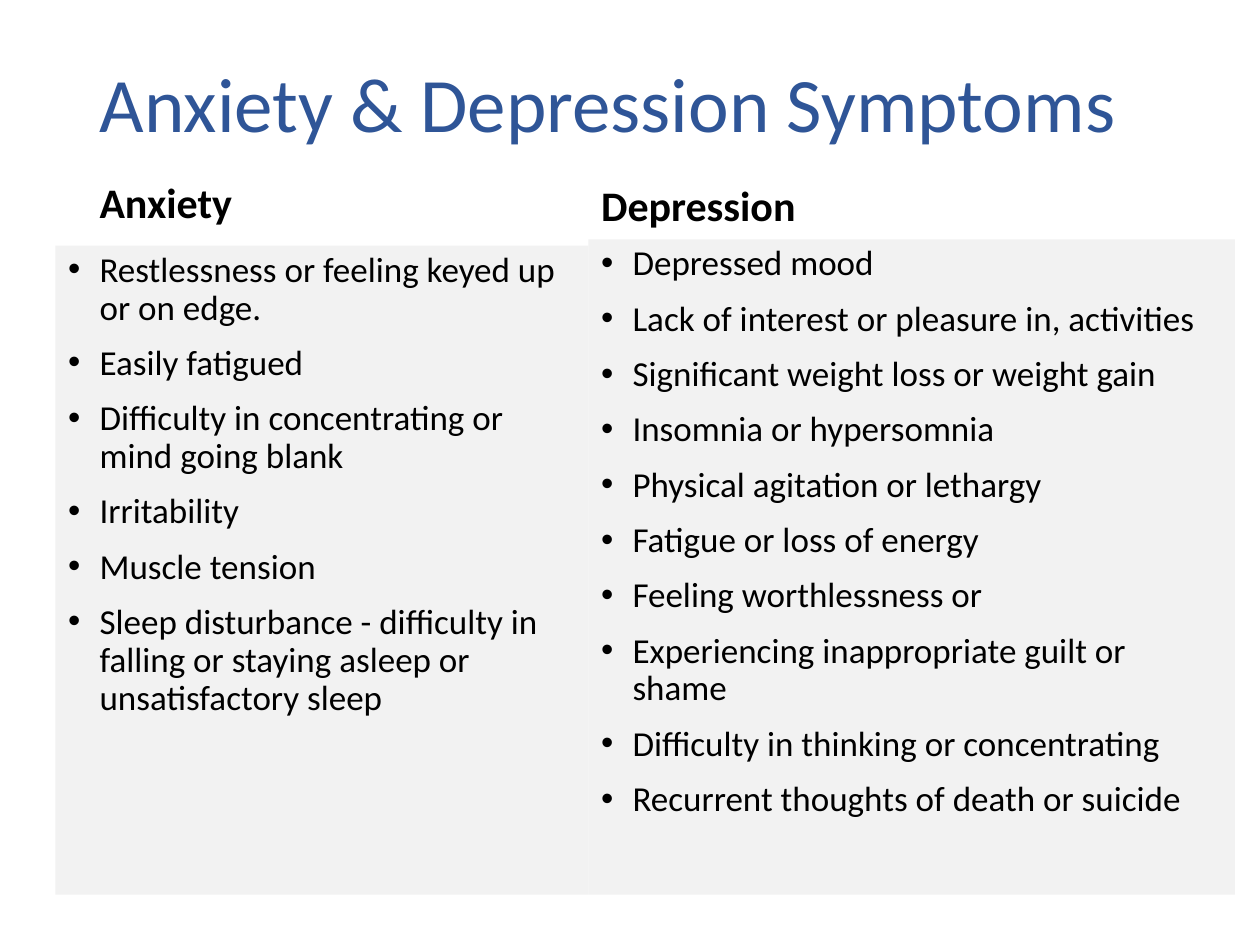
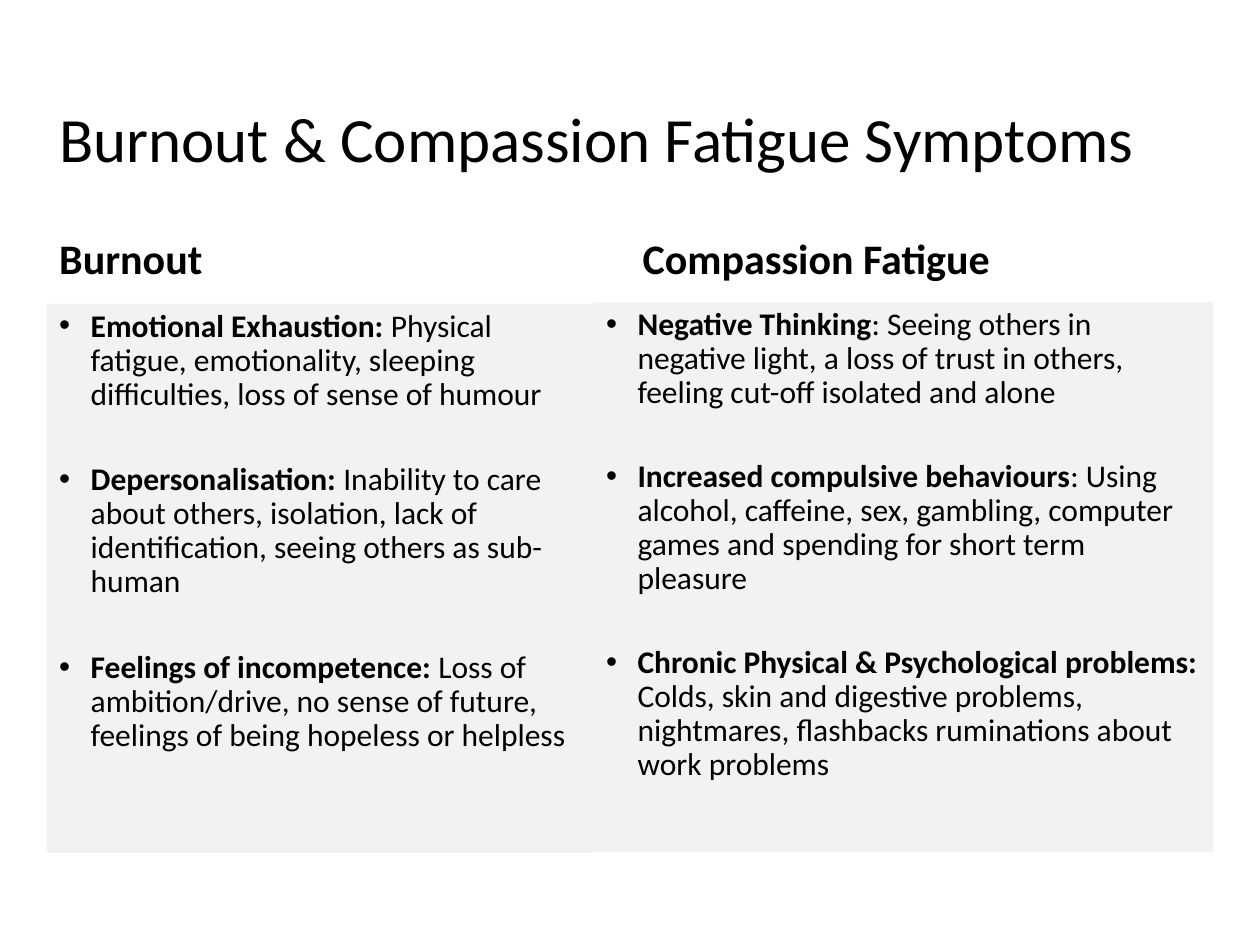
from dataclasses import dataclass

from pptx import Presentation
from pptx.dml.color import RGBColor
from pptx.enum.text import MSO_ANCHOR as Anchor, MSO_AUTO_SIZE as AutoSize, PP_ALIGN as Align
from pptx.util import Pt

PX = 9144  # EMU in one px, 100 px to the inch
COMPARISON_LAYOUT = 3 + 1


@dataclass(frozen=True)
class Theme:
    font: str = "Calibri"
    ink: str = "000000"
    blue: str = "2F5597"
    panel: str = "F2F2F2"
    heading_size: int = 24
    spacing: float = 0.9
    gap: float = 10
    indent: int = 25


def write(box, items, *, size, color, font, spacing, gap=0, bold=False, indent=0,
          anchor=Anchor.TOP):
    """Write one paragraph per item; a (lead, rest) item gets a bold lead."""
    frame = box.text_frame
    frame.word_wrap = True
    frame.auto_size = AutoSize.NONE
    frame.vertical_anchor = anchor
    for number, item in enumerate(items):
        para = frame.add_paragraph() if number else frame.paragraphs[0]
        para.alignment = Align.LEFT
        para.line_spacing = spacing
        para.space_before = Pt(gap)
        if indent:
            properties = para._p.get_or_add_pPr()
            properties.set("marL", str(indent * PX))
            properties.set("indent", str(-indent * PX))
        parts = [(item, bold)] if isinstance(item, str) else zip(item, (True, False))
        for text, is_bold in parts:
            span = para.add_run()
            span.text = text
            span.font.name = font
            span.font.size = Pt(size)
            span.font.bold = is_bold
            span.font.color.rgb = RGBColor.from_string(color)


class ComparisonDeck:
    """Slides with a title over two headed lists."""

    def __init__(self, theme):
        self.theme = theme
        self.deck = Presentation()
        self.deck.slide_width, self.deck.slide_height = 1000 * PX, 750 * PX
        self.page = None

    def add_page(self):
        self.page = self.deck.slides.add_slide(self.deck.slide_layouts[COMPARISON_LAYOUT])

    def place(self, index, area):
        box = self.page.placeholders[index]
        box.left, box.top, box.width, box.height = (length * PX for length in area)
        return box

    def title(self, text, area, size, color):
        write(self.place(0, area), [text], size=size, color=color, font=self.theme.font,
              spacing=self.theme.spacing, anchor=Anchor.MIDDLE)

    def heading(self, column, text, area, spacing):
        theme = self.theme
        write(self.place(2 * column + 1, area), [text], size=theme.heading_size,
              color=theme.ink, font=theme.font, spacing=spacing, gap=theme.gap,
              bold=True, anchor=Anchor.BOTTOM)

    def symptoms(self, column, items, area, size, gap):
        theme = self.theme
        box = self.place(2 * column + 2, area)
        box.fill.solid()
        box.fill.fore_color.rgb = RGBColor.from_string(theme.panel)
        write(box, items, size=size, color=theme.ink, font=theme.font,
              spacing=theme.spacing, gap=gap, indent=theme.indent)


ANXIETY = [
    "Restlessness or feeling keyed up or on edge.",
    "Easily fatigued",
    "Difficulty in concentrating or mind going blank",
    "Irritability",
    "Muscle tension",
    "Sleep disturbance - difficulty in falling or staying asleep or unsatisfactory sleep",
]
DEPRESSION = [
    "Depressed mood",
    "Lack of interest or pleasure in, activities",
    "Significant weight loss or weight gain",
    "Insomnia or hypersomnia",
    "Physical agitation or lethargy",
    "Fatigue or loss of energy",
    "Feeling worthlessness or",
    "Experiencing inappropriate guilt or shame",
    "Difficulty in thinking or concentrating",
    "Recurrent thoughts of death or suicide",
]
BURNOUT = [
    ("Emotional Exhaustion: ",
     "Physical fatigue, emotionality, sleeping difficulties, loss of sense of humour"),
    ("Depersonalisation: ",
     "Inability to care about others, isolation, lack of identification, "
     "seeing others as sub-human"),
    ("Feelings of incompetence: ",
     "Loss of ambition/drive, no sense of future, feelings of being hopeless or helpless"),
]
COMPASSION_FATIGUE = [
    ("Negative Thinking",
     ": Seeing others in negative light, a loss of trust in others, "
     "feeling cut-off isolated and alone"),
    ("Increased compulsive behaviours",
     ": Using alcohol, caffeine, sex, gambling, computer games and spending "
     "for short term pleasure"),
    ("Chronic Physical & Psychological problems: ",
     "Colds, skin and digestive problems, nightmares, flashbacks ruminations "
     "about work problems"),
]


def main():
    theme = Theme()
    show = ComparisonDeck(theme)

    show.add_page()
    show.title("Anxiety & Depression Symptoms", (69, 40, 862, 90), 44, theme.blue)
    show.heading(0, "Anxiety", (69, 95, 423, 90), 0.8)
    show.symptoms(0, ANXIETY, (44, 195, 423, 515), 20, theme.gap)
    show.heading(1, "Depression", (467, 142, 425, 45), 0.8)
    show.symptoms(1, DEPRESSION, (467, 190, 513, 520), 20, theme.gap)

    show.add_page()
    show.title("Burnout & Compassion Fatigue Symptoms", (37, 40, 963, 145), 36, theme.ink)
    show.heading(0, "Burnout", (37, 140, 457, 90), theme.spacing)
    show.symptoms(0, BURNOUT, (37, 241, 434, 436), 18, 29.5)
    show.heading(1, "Compassion Fatigue", (500, 140, 425, 90), theme.spacing)
    show.symptoms(1, COMPASSION_FATIGUE, (471, 240, 492, 436), 18, 28.5)

    show.deck.save("out.pptx")


if __name__ == "__main__":
    main()
